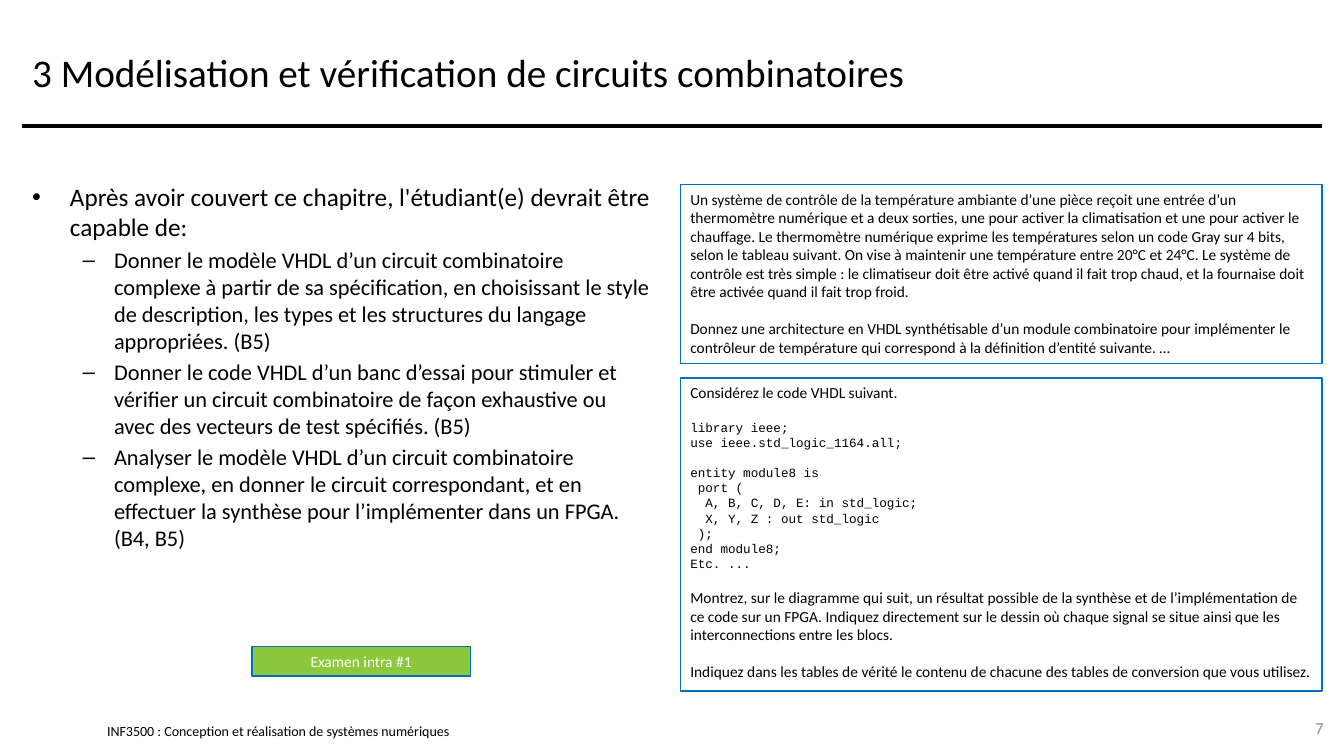
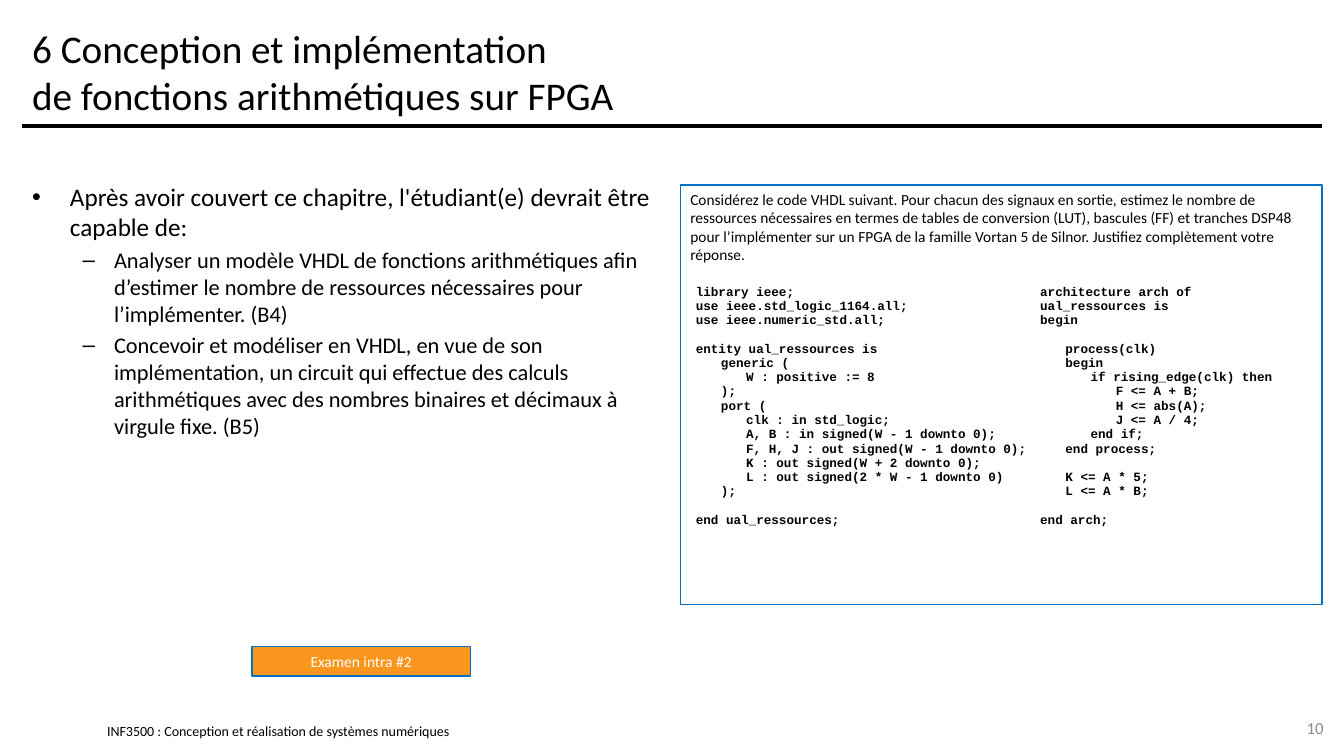
from lxml.etree import SubElement
from pptx import Presentation
from pptx.dml.color import RGBColor
from pptx.enum.shapes import MSO_CONNECTOR, MSO_SHAPE
from pptx.enum.text import MSO_ANCHOR as ANCHOR, MSO_AUTO_SIZE as AUTO, PP_ALIGN as ALIGN
from pptx.oxml.ns import qn
from pptx.util import Emu, Pt

PX = 9525
COLORS = {
    "black": "000000", "white": "FFFFFF", "grey": "8C8C8C",
    "blue": "0070C0", "green": "8CC83C", "orange": "FA961E",
}
LEADING = {"Calibri": 1.22, "Courier New": 1.13}
TAB_STOPS = [24, 48, 72, 96, 120]
FOOTER = "INF3500 : Conception et réalisation de systèmes numériques"
GOAL = "Après avoir couvert ce chapitre, l'étudiant(e) devrait être capable de:"


def px(*values):
    return [Emu(v * PX) for v in values]


def rgb(name):
    return RGBColor.from_string(COLORS[name])


def add_tabs(p, stops):
    tab_list = SubElement(p._p.get_or_add_pPr(), qn("a:tabLst"))
    for stop in px(*stops):
        SubElement(tab_list, qn("a:tab"), pos=str(int(stop)), algn="l")


def write(tf, lines, size=11, font="Calibri", color="black", bold=False,
          align=ALIGN.LEFT, level=0, gap=0, leading=None, tabs=()):
    """Append one paragraph a line; an empty line becomes space before the next."""
    blank = size * LEADING[font]
    for line in [lines] if isinstance(lines, str) else lines:
        if not line:
            gap += blank
            continue
        first = not tf.text
        p = tf.paragraphs[0] if first else tf.add_paragraph()
        p.text = line.replace("    ", "\t") if tabs else line
        p.alignment, p.level = align, level
        if first or gap:
            p.space_before = Pt(gap)
        if leading:
            p.line_spacing = Pt(leading)
        if tabs:
            add_tabs(p, tabs)
        for r in p.runs:
            r.font.size, r.font.name, r.font.bold = Pt(size), font, bold
            r.font.color.rgb = rgb(color)
        gap = 0


class Deck:
    def __init__(self):
        self.prs = Presentation()
        self.prs.slide_width, self.prs.slide_height = px(1280, 720)
        self.slide = None

    def add_slide(self, title, goals, number):
        self.slide = self.prs.slides.add_slide(self.prs.slide_layouts[1])
        self.rule(21, 1259, 120)
        write(self.placeholder(0, 21, 16, 1237, 104), title, size=28)
        body = self.placeholder(1, 21, 168, 608, 488)
        write(body, GOAL, size=18)
        write(body, goals, size=16, level=1)
        self.label(FOOTER, 102, 688, 490, 16, margin=0, size=10)
        self.label(str(number), 1206, 674, 64, 38, size=12, color="grey", align=ALIGN.RIGHT)

    def placeholder(self, index, x, y, w, h):
        sp = self.slide.placeholders[index]
        sp.left, sp.top, sp.width, sp.height = px(x, y, w, h)
        sp.text_frame.auto_size = AUTO.NONE
        return sp.text_frame

    def rule(self, x1, x2, y):
        line = self.slide.shapes.add_connector(MSO_CONNECTOR.STRAIGHT, *px(x1, y, x2, y))
        line.line.color.rgb, line.line.width = rgb("black"), Pt(3)
        SubElement(line._element.spPr, qn("a:effectLst"))

    def label(self, text, x, y, w, h, margin=None, **fmt):
        tf = self.slide.shapes.add_textbox(*px(x, y, w, h)).text_frame
        tf.word_wrap, tf.vertical_anchor = True, ANCHOR.MIDDLE
        if margin is not None:
            tf.margin_left = tf.margin_top = tf.margin_right = tf.margin_bottom = Emu(margin)
        write(tf, text, **fmt)

    def box(self, x, y, w, h, fill="white"):
        sp = self.slide.shapes.add_shape(MSO_SHAPE.RECTANGLE, *px(x, y, w, h))
        sp.shadow.inherit = False
        sp.fill.solid()
        sp.fill.fore_color.rgb = rgb(fill)
        sp.line.color.rgb, sp.line.width = rgb("blue"), Pt(1)
        tf = sp.text_frame
        tf.word_wrap, tf.vertical_anchor = True, ANCHOR.TOP
        return tf

    def question(self, y, h):
        return self.box(648, y, 611, h)

    def exam_tag(self, text, fill):
        write(self.box(240, 616, 208, 28, fill), text, color="white", align=ALIGN.CENTER)

    def code_table(self, x, y, height, widths, listings):
        frame = self.slide.shapes.add_table(1, len(widths), *px(x, y, sum(widths), height))
        table = frame.table
        table.first_row = table.horz_banding = False
        for i, (width, code) in enumerate(zip(px(*widths), listings)):
            table.columns[i].width = width
            cell = table.cell(0, i)
            cell.fill.background()
            cell.margin_left = cell.margin_right = Pt(5)
            cell.margin_top = cell.margin_bottom = 0
            write(cell.text_frame, code.splitlines(), size=9, font="Courier New",
                  bold=True, tabs=TAB_STOPS)


MODULE_CODE = """library ieee;
use ieee.std_logic_1164.all;

entity module8 is
 port (
  A, B, C, D, E: in std_logic;
  X, Y, Z : out std_logic
 );
end module8;
Etc. ..."""

ENTITY_CODE = """library ieee;
use ieee.std_logic_1164.all;
use ieee.numeric_std.all;

entity ual_ressources is
    generic (
        W : positive := 8
    );
    port (
        clk : in std_logic;
        A, B : in signed(W - 1 downto 0);
        F, H, J : out signed(W - 1 downto 0);
        K : out signed(W + 2 downto 0);
        L : out signed(2 * W - 1 downto 0)
    );

end ual_ressources;"""

ARCHITECTURE_CODE = """architecture arch of ual_ressources is
begin

    process(clk)
    begin
        if rising_edge(clk) then
            F <= A + B;
            H <= abs(A);
            J <= A / 4;
        end if;
    end process;

    K <= A * 5;
    L <= A * B;

end arch;"""


def combinational_slide(deck):
    deck.add_slide("3 Modélisation et vérification de circuits combinatoires", [
        "Donner le modèle VHDL d’un circuit combinatoire complexe à partir de sa "
        "spécification, en choisissant le style de description, les types et les "
        "structures du langage appropriées. (B5)",
        "Donner le code VHDL d’un banc d’essai pour stimuler et vérifier un circuit "
        "combinatoire de façon exhaustive ou avec des vecteurs de test spécifiés. (B5)",
        "Analyser le modèle VHDL d’un circuit combinatoire complexe, en donner le "
        "circuit correspondant, et en effectuer la synthèse pour l’implémenter dans "
        "un FPGA. (B4, B5)",
    ], 7)
    write(deck.question(176, 170), [
        "Un système de contrôle de la température ambiante d’une pièce reçoit une entrée "
        "d’un thermomètre numérique et a deux sorties, une pour activer la climatisation "
        "et une pour activer le chauffage. Le thermomètre numérique exprime les "
        "températures selon un code Gray sur 4 bits, selon le tableau suivant. On vise à "
        "maintenir une température entre 20°C et 24°C. Le système de contrôle est très "
        "simple : le climatiseur doit être activé quand il fait trop chaud, et la "
        "fournaise doit être activée quand il fait trop froid.",
        "",
        "Donnez une architecture en VHDL synthétisable d’un module combinatoire pour "
        "implémenter le contrôleur de température qui correspond à la définition "
        "d’entité suivante. …",
    ])
    tf = deck.question(360, 298)
    write(tf, "Considérez le code VHDL suivant.")
    write(tf, MODULE_CODE.splitlines(), size=9, font="Courier New", gap=13, leading=10.9)
    write(tf, [
        "Montrez, sur le diagramme qui suit, un résultat possible de la synthèse et de "
        "l’implémentation de ce code sur un FPGA. Indiquez directement sur le dessin où "
        "chaque signal se situe ainsi que les interconnections entre les blocs.",
        "",
        "Indiquez dans les tables de vérité le contenu de chacune des tables de "
        "conversion que vous utilisez.",
    ], gap=12)
    deck.exam_tag("Examen intra #1", "green")


def arithmetic_slide(deck):
    deck.add_slide("6 Conception et implémentation\nde fonctions arithmétiques sur FPGA", [
        "Analyser un modèle VHDL de fonctions arithmétiques afin d’estimer le nombre de "
        "ressources nécessaires pour l’implémenter. (B4)",
        "Concevoir et modéliser en VHDL, en vue de son implémentation, un circuit qui "
        "effectue des calculs arithmétiques avec des nombres binaires et décimaux à "
        "virgule fixe. (B5)",
    ], 10)
    write(deck.question(176, 400),
          "Considérez le code VHDL suivant. Pour chacun des signaux en sortie, estimez le "
          "nombre de ressources nécessaires en termes de tables de conversion (LUT), "
          "bascules (FF) et tranches DSP48 pour l’implémenter sur un FPGA de la famille "
          "Vortan 5 de Silnor. Justifiez complètement votre réponse.")
    deck.code_table(656, 272, 259, [328, 264], [ENTITY_CODE, ARCHITECTURE_CODE])
    deck.exam_tag("Examen intra #2", "orange")


def main():
    deck = Deck()
    combinational_slide(deck)
    arithmetic_slide(deck)
    deck.prs.save("out.pptx")


if __name__ == "__main__":
    main()
